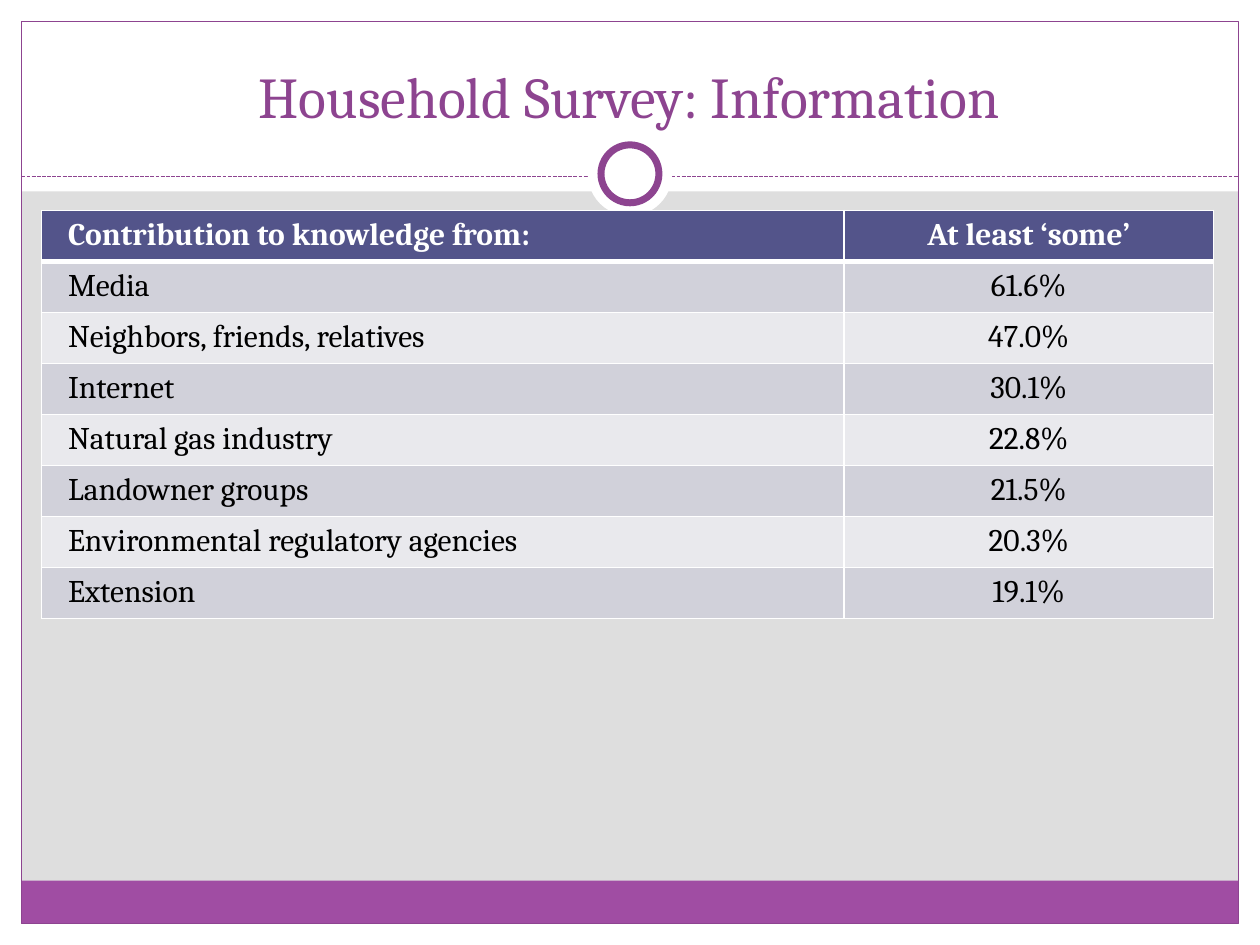
"""Build a slide with a table of household information sources."""
from lxml import etree
from pptx import Presentation
from pptx.dml.color import RGBColor
from pptx.enum.dml import MSO_LINE
from pptx.enum.shapes import MSO_CONNECTOR, MSO_SHAPE
from pptx.enum.text import MSO_ANCHOR, PP_ALIGN
from pptx.oxml.ns import qn
from pptx.util import Inches, Pt

TITLE = "Household Survey: Information"
SOURCES = [
    ("Contribution to knowledge from:", "At least ‘some’"),
    ("Media", "61.6%"),
    ("Neighbors, friends, relatives", "47.0%"),
    ("Internet", "30.1%"),
    ("Natural gas industry", "22.8%"),
    ("Landowner groups", "21.5%"),
    ("Environmental regulatory agencies", "20.3%"),
    ("Extension", "19.1%"),
]

FONT = "Cambria"
WHITE = RGBColor(0xFF, 0xFF, 0xFF)
BLACK = RGBColor(0, 0, 0)
BACKGROUND = RGBColor(0xDE, 0xDE, 0xDE)
PURPLE = RGBColor(0x8D, 0x44, 0x90)
FOOTER = RGBColor(0xA0, 0x4D, 0xA3)
HEADER = RGBColor(0x53, 0x54, 0x8A)
BANDS = (RGBColor(0xE9, 0xE9, 0xED), RGBColor(0xD1, 0xD1, 0xDA))

WIDTH, HEIGHT = 10, 7.5
MARGIN = 0.17
INNER_WIDTH, INNER_HEIGHT = WIDTH - 2 * MARGIN, HEIGHT - 2 * MARGIN
TOP_HEIGHT, FOOTER_HEIGHT = 1.52, 0.34
RULE_Y, RING_Y = 1.4, 1.38
COLUMNS, ROW_HEIGHT = (6.37, 2.93), 0.405


def add_panel(slide, kind, box, fill=None, line=None, weight=0.75):
    panel = slide.shapes.add_shape(kind, *map(Inches, box))
    panel.shadow.inherit = False
    if fill is None:
        panel.fill.background()
    else:
        panel.fill.solid()
        panel.fill.fore_color.rgb = fill
    if line is None:
        panel.line.fill.background()
    else:
        panel.line.color.rgb = line
        panel.line.width = Pt(weight)


def add_frame(slide):
    strips = [
        (0, HEIGHT - MARGIN, WIDTH, MARGIN),
        (0, 0, WIDTH, TOP_HEIGHT),
        (0, 0, MARGIN, HEIGHT),
        (WIDTH - MARGIN, 0, MARGIN, HEIGHT),
    ]
    for strip in strips:
        add_panel(slide, MSO_SHAPE.RECTANGLE, strip, WHITE)
    footer_top = HEIGHT - MARGIN - FOOTER_HEIGHT
    add_panel(slide, MSO_SHAPE.RECTANGLE,
              (MARGIN, footer_top, INNER_WIDTH, FOOTER_HEIGHT), FOOTER)
    add_panel(slide, MSO_SHAPE.RECTANGLE,
              (MARGIN, MARGIN, INNER_WIDTH, INNER_HEIGHT), line=PURPLE)

    rule = slide.shapes.add_connector(
        MSO_CONNECTOR.STRAIGHT, Inches(MARGIN), Inches(RULE_Y),
        Inches(WIDTH - MARGIN), Inches(RULE_Y))
    rule.line.color.rgb = PURPLE
    rule.line.width = Pt(0.75)
    rule.line.dash_style = MSO_LINE.SQUARE_DOT
    etree.SubElement(rule._element.spPr, qn("a:effectLst"))

    for size, ring in ((0.67, None), (0.46, PURPLE)):
        add_panel(slide, MSO_SHAPE.OVAL,
                  (WIDTH / 2 - size / 2, RING_Y - size / 2, size, size),
                  WHITE, ring, 4)


def write(frame, text, size, color, align, bold=False):
    frame.text = text
    paragraph = frame.paragraphs[0]
    paragraph.alignment = align
    font = paragraph.runs[0].font
    font.name, font.size, font.bold = FONT, Pt(size), bold
    font.color.rgb = color


def add_title(slide):
    title = slide.shapes.add_textbox(*map(Inches, (0.33, 0.25, 9.33, 0.83)))
    title.text_frame.word_wrap = True
    title.text_frame.vertical_anchor = MSO_ANCHOR.BOTTOM
    write(title.text_frame, TITLE, 33, PURPLE, PP_ALIGN.CENTER)


def add_borders(cell, top, bottom):
    properties = cell._tc.get_or_add_tcPr()
    for side, weight in (("L", 1), ("R", 1), ("T", top), ("B", bottom)):
        border = etree.SubElement(properties, qn(f"a:ln{side}"), w=str(Pt(weight)))
        fill = etree.SubElement(border, qn("a:solidFill"))
        etree.SubElement(fill, qn("a:srgbClr"), val=str(WHITE))


def add_sources(slide):
    table = slide.shapes.add_table(
        len(SOURCES), len(COLUMNS), Inches(0.33), Inches(1.67),
        Inches(sum(COLUMNS)), Inches(ROW_HEIGHT * len(SOURCES))).table
    for column, width in zip(table.columns, COLUMNS):
        column.width = Inches(width)
    for r, source in enumerate(SOURCES):
        table.rows[r].height = Inches(ROW_HEIGHT)
        is_header = r == 0
        for c, text in enumerate(source):
            cell = table.cell(r, c)
            cell.margin_left = cell.margin_right = Inches(0.21)
            cell.margin_top = cell.margin_bottom = Inches(0.05)
            add_borders(cell, 3 if r == 1 else 1, 3 if is_header else 1)
            cell.fill.solid()
            cell.fill.fore_color.rgb = HEADER if is_header else BANDS[r % 2]
            write(cell.text_frame, text, 18, WHITE if is_header else BLACK,
                  PP_ALIGN.CENTER if c else PP_ALIGN.LEFT, is_header)


def main():
    deck = Presentation()
    deck.slide_width, deck.slide_height = Inches(WIDTH), Inches(HEIGHT)
    slide = deck.slides.add_slide(deck.slide_layouts[6])
    slide.background.fill.solid()
    slide.background.fill.fore_color.rgb = BACKGROUND
    add_frame(slide)
    add_title(slide)
    add_sources(slide)
    deck.save("out.pptx")


if __name__ == "__main__":
    main()
